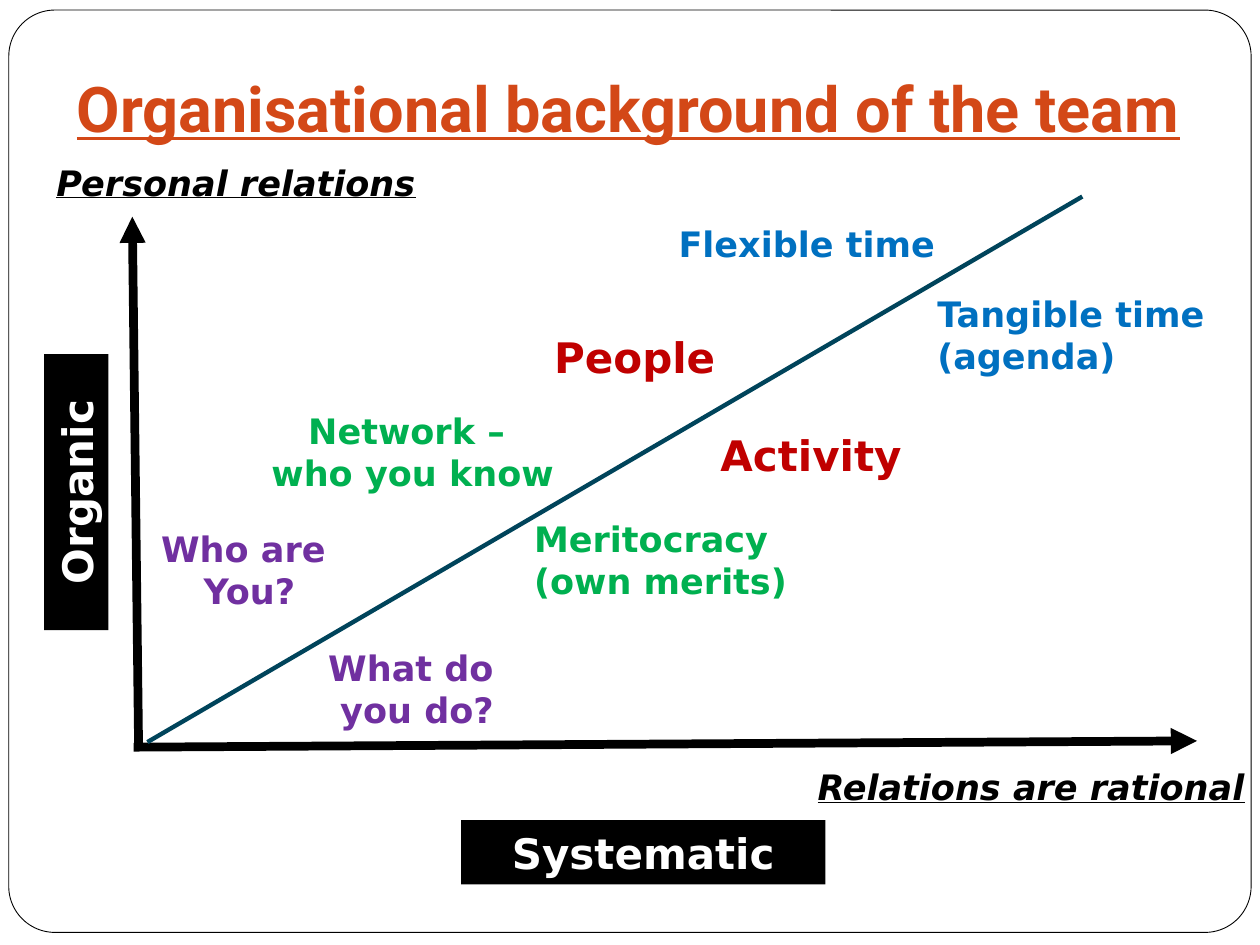
from dataclasses import dataclass

from lxml import etree
from pptx import Presentation
from pptx.dml.color import RGBColor
from pptx.enum.shapes import MSO_CONNECTOR, MSO_SHAPE
from pptx.enum.text import MSO_ANCHOR, MSO_AUTO_SIZE, PP_ALIGN
from pptx.oxml.ns import qn
from pptx.util import Inches, Pt

LINE = MSO_CONNECTOR.STRAIGHT
RECT, ROUND = MSO_SHAPE.RECTANGLE, MSO_SHAPE.ROUNDED_RECTANGLE
LEFT, MID, RIGHT = PP_ALIGN.LEFT, PP_ALIGN.CENTER, PP_ALIGN.RIGHT
GROW, FIXED = MSO_AUTO_SIZE.SHAPE_TO_FIT_TEXT, MSO_AUTO_SIZE.NONE
MIDDLE = MSO_ANCHOR.MIDDLE

BLACK = RGBColor(0x00, 0x00, 0x00)
WHITE = RGBColor(0xFF, 0xFF, 0xFF)
ORANGE = RGBColor(0xD3, 0x48, 0x17)
TEAL = RGBColor(0x00, 0x44, 0x5B)
GREEN = RGBColor(0x00, 0xB0, 0x50)
BLUE = RGBColor(0x00, 0x70, 0xC0)
PURPLE = RGBColor(0x70, 0x30, 0xA0)
RED = RGBColor(0xC0, 0x00, 0x00)
FONT, HEAD = "DejaVu Sans", "Roboto"


@dataclass
class Label:
    text: str
    box: tuple[float, float, float, float]
    color: RGBColor
    size: int = 20
    align: PP_ALIGN = LEFT
    wrap: bool = False
    axis: bool = False  # axis captions are italic and underlined


@dataclass
class Bar:
    text: str
    box: tuple[float, float, float, float]
    turn: int = 0


@dataclass
class Stroke:
    start: tuple[float, float]
    end: tuple[float, float]
    color: RGBColor
    width: float
    arrow: bool = False


STROKES = [
    Stroke((1.1, 5.94), (1.05, 1.72), BLACK, 5, True),
    Stroke((1.06, 5.93), (9.5, 5.88), BLACK, 5, True),
    Stroke((1.17, 5.89), (8.59, 1.56), TEAL, 2.5),
]
BARS = [
    Bar("Systematic", (3.66, 6.51, 2.89, 0.51)),
    Bar("Organic", (-0.49, 3.65, 2.19, 0.51), 270),
]
LABELS = [
    Label("Network – \nwho you know", (2.03, 3.2, 2.49, 0.77), GREEN, align=MID),
    Label("Flexible time", (4.77, 1.72, 2.75, 0.44), BLUE, align=RIGHT, wrap=True),
    Label("Who are \nYou?", (1.17, 4.14, 1.62, 0.77), PURPLE, align=MID),
    Label("What do \nyou do?", (2.5, 5.08, 1.62, 0.77), PURPLE, align=MID),
    Label("Relations are rational", (6.39, 6.03, 3.61, 0.44), BLACK, axis=True),
    Label("Meritocracy\n(own merits)", (4.14, 4.06, 2.28, 0.77), GREEN),
    Label("People", (4.3, 2.58, 1.48, 0.51), RED, 24),
    Label("Activity", (5.62, 3.36, 1.64, 0.51), RED, 24),
    Label("Tangible time\n(agenda)", (7.34, 2.27, 2.35, 0.77), BLUE),
    Label("Personal relations", (0.35, 1.23, 3.07, 0.44), BLACK, axis=True),
]


def inch(vals: tuple[float, ...]) -> list[Inches]:
    return [Inches(val) for val in vals]


def write(frame, text: str, color: RGBColor, size: int, align: PP_ALIGN,
          font: str = FONT, italic: bool = False, under: bool = False) -> None:
    frame.text = text
    for para in frame.paragraphs:
        para.alignment = align
        for run in para.runs:
            face = run.font
            face.name, face.size, face.bold = font, Pt(size), True
            face.italic, face.underline = italic, under
            face.color.rgb = color


def draw_stroke(slide, item: Stroke) -> None:
    line = slide.shapes.add_connector(LINE, *inch(item.start + item.end))
    line.line.color.rgb = item.color
    line.line.width = Pt(item.width)
    if item.arrow:
        pen = line.line._get_or_add_ln()
        etree.SubElement(pen, qn("a:tailEnd"), type="triangle")
    etree.SubElement(line._element.spPr, qn("a:effectLst"))


def draw_bar(slide, item: Bar) -> None:
    bar = slide.shapes.add_shape(RECT, *inch(item.box))
    bar.shadow.inherit = False
    bar.rotation = item.turn
    bar.fill.solid()
    bar.fill.fore_color.rgb = BLACK
    bar.line.fill.background()
    bar.text_frame.auto_size = GROW
    write(bar.text_frame, item.text, WHITE, 24, MID)


def draw_label(slide, item: Label) -> None:
    frame = slide.shapes.add_textbox(*inch(item.box)).text_frame
    frame.word_wrap = item.wrap
    frame.auto_size = GROW
    write(frame, item.text, item.color, item.size, item.align,
          italic=item.axis, under=item.axis)


def draw_frame(slide) -> None:
    edge = slide.shapes.add_shape(ROUND, *inch((0.07, 0.08, 9.86, 7.32)))
    edge.adjustments[0] = 0.05
    edge.shadow.inherit = False
    edge.fill.solid()
    edge.fill.fore_color.rgb = WHITE
    edge.line.color.rgb = BLACK
    edge.line.width = Pt(0.5)
    # Send it behind the title
    slide.shapes._spTree.insert(2, edge._element)


def set_title(slide) -> None:
    title = slide.shapes.title
    title.left, title.top, title.width, title.height = inch((0.51, 0.36, 9.15, 1.03))
    frame = title.text_frame
    frame.auto_size, frame.word_wrap = FIXED, True
    frame.vertical_anchor = MIDDLE
    frame.margin_bottom = Inches(0.1)
    write(frame, "Organisational background of the team", ORANGE, 36, LEFT,
          font=HEAD, under=True)


def main() -> None:
    deck = Presentation()
    deck.slide_width, deck.slide_height = Inches(10), Inches(7.5)
    slide = deck.slides.add_slide(deck.slide_layouts[5])

    # Border and heading
    draw_frame(slide)
    set_title(slide)

    # Axes and diagonal
    for item in STROKES:
        draw_stroke(slide, item)

    # Axis names and the paired traits
    for item in BARS:
        draw_bar(slide, item)
    for item in LABELS:
        draw_label(slide, item)

    deck.save("out.pptx")


if __name__ == "__main__":
    main()
